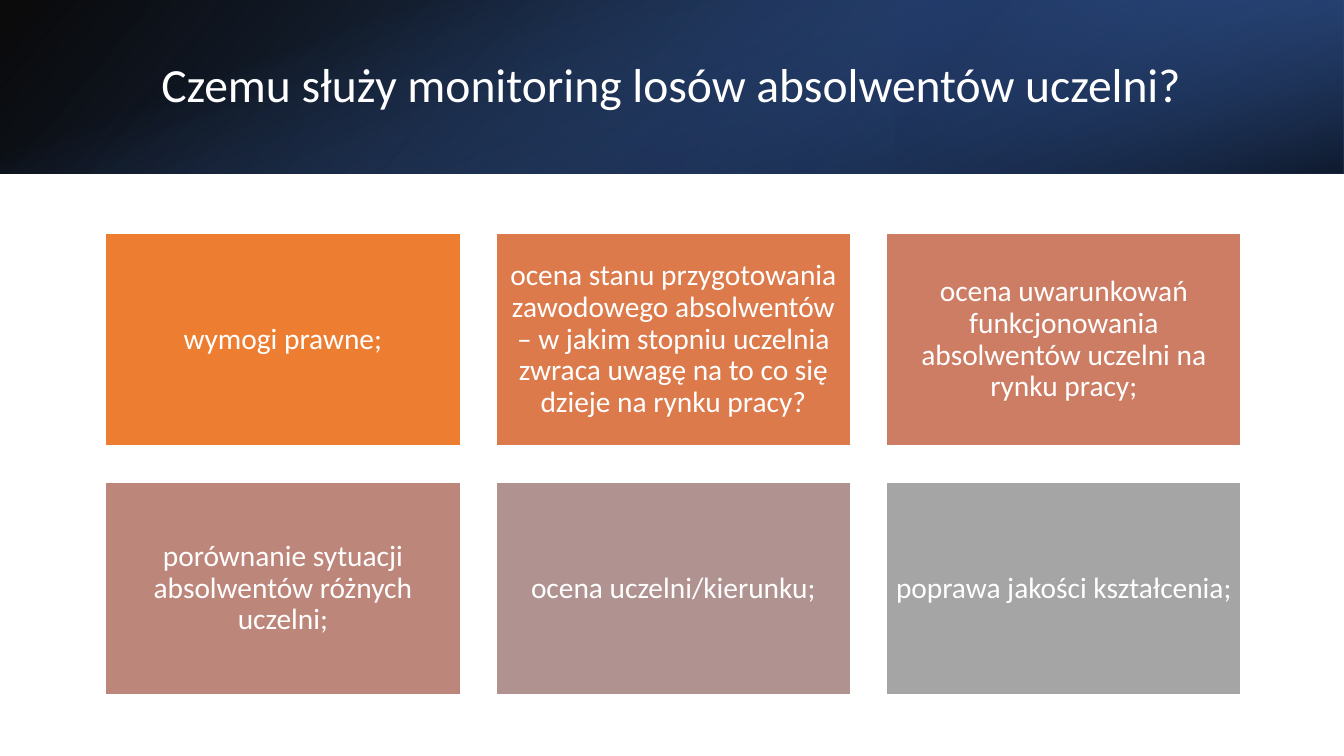
"""Build a slide with a gradient title band and a grid of six cards."""
import pptx
import pptx.dml.color
import pptx.enum.shapes
import pptx.enum.text
import pptx.oxml
import pptx.oxml.ns
import pptx.util

Cm = pptx.util.Cm
RGBColor = pptx.dml.color.RGBColor
WHITE = RGBColor(0xFF, 0xFF, 0xFF)
BLACK = RGBColor(0x00, 0x00, 0x00)
NAVY = RGBColor(0x20, 0x38, 0x64)
DEEP = RGBColor(0x2F, 0x55, 0x97)
BLUE = RGBColor(0x44, 0x72, 0xC4)
FONT = "Calibri"
WIDE, BAND = 33.87, 4.37

CARDS = [
    ("wymogi prawne;", RGBColor(0xED, 0x7D, 0x31)),
    ("ocena stanu przygotowania zawodowego absolwentów – w jakim stopniu "
     "uczelnia zwraca uwagę na to co się dzieje na rynku pracy?",
     RGBColor(0xDC, 0x7A, 0x4B)),
    ("ocena uwarunkowań funkcjonowania absolwentów uczelni na rynku pracy;",
     RGBColor(0xCC, 0x7D, 0x64)),
    ("porównanie sytuacji absolwentów różnych uczelni;",
     RGBColor(0xBD, 0x86, 0x7B)),
    ("ocena uczelni/kierunku;", RGBColor(0xB0, 0x93, 0x91)),
    ("poprawa jakości kształcenia;", RGBColor(0xA5, 0xA5, 0xA5)),
]


def add_rect(slide, left, top, width, height):
    """Add a plain rectangle measured in centimetres."""
    rect = slide.shapes.add_shape(
        pptx.enum.shapes.MSO_SHAPE.RECTANGLE,
        Cm(left), Cm(top), Cm(width), Cm(height))
    rect.shadow.inherit = False
    return rect


def add_fade(slide, box, stops, angle, turn=0, flip=False):
    """Add a rectangle with a see-through linear gradient."""
    rect = add_rect(slide, *box)
    rect.rotation = turn
    rect.line.fill.background()
    props = rect._element.spPr
    if flip:
        props.find(pptx.oxml.ns.qn("a:xfrm")).set("flipH", "1")
    marks = "".join(
        f'<a:gs pos="{place * 1000}"><a:srgbClr val="{color}">'
        f'<a:alpha val="{alpha * 1000}"/></a:srgbClr></a:gs>'
        for place, color, alpha in stops)
    fill = pptx.oxml.parse_xml(
        f'<a:gradFill {pptx.oxml.ns.nsdecls("a")} rotWithShape="1">'
        f'<a:gsLst>{marks}</a:gsLst>'
        f'<a:lin ang="{angle * 60000}" scaled="0"/></a:gradFill>')
    props.find(pptx.oxml.ns.qn("a:prstGeom")).addnext(fill)


def add_text(frame, text, size, align):
    """Write one white run, centred in height."""
    frame.word_wrap = True
    frame.auto_size = pptx.enum.text.MSO_AUTO_SIZE.NONE
    frame.vertical_anchor = pptx.enum.text.MSO_ANCHOR.MIDDLE
    line = frame.paragraphs[0]
    line.alignment = align
    line.line_spacing = 0.9
    run = line.add_run()
    run.text = text
    run.font.name = FONT
    run.font.size = pptx.util.Pt(size)
    run.font.color.rgb = WHITE


def add_card(slide, left, top, text, color):
    """Add one filled card with its text."""
    card = add_rect(slide, left, top, 8.94, 5.36)
    card.fill.solid()
    card.fill.fore_color.rgb = color
    card.line.color.rgb = WHITE
    card.line.width = pptx.util.Pt(1)
    frame = card.text_frame
    frame.margin_left = frame.margin_right = Cm(0.22)
    frame.margin_top = frame.margin_bottom = Cm(0.22)
    add_text(frame, text, 21, pptx.enum.text.PP_ALIGN.CENTER)


def add_title(slide, text):
    """Place the title on top of the band."""
    title = slide.shapes.title
    title.left, title.top = Cm(3.81), Cm(0.97)
    title.width, title.height = Cm(27.89), Cm(2.44)
    add_text(title.text_frame, text, 34, pptx.enum.text.PP_ALIGN.LEFT)
    slide.shapes._spTree.append(title._element)


def main():
    """Build and save the slide."""
    deck = pptx.Presentation()
    deck.slide_width, deck.slide_height = Cm(WIDE), Cm(19.05)
    slide = deck.slides.add_slide(deck.slide_layouts[5])
    add_fade(slide, (0, 0, WIDE, BAND),
             [(0, BLACK, 96), (100, DEEP, 100)], 140, flip=True)
    add_fade(slide, (WIDE * 2 / 3, 0, WIDE / 3, BAND),
             [(19, NAVY, 68), (100, BLUE, 79)], 320, turn=180, flip=True)
    shift = (WIDE - BAND) / 2
    add_fade(slide, (shift, -shift, BAND, WIDE),
             [(23, BLUE, 0), (99, BLACK, 74)], 340, turn=90)
    add_title(slide, "Czemu służy monitoring losów absolwentów uczelni?")
    for index, (text, color) in enumerate(CARDS):
        row, col = divmod(index, 3)
        add_card(slide, 2.66 + col * 9.84, 5.88 + row * 6.27, text, color)
    deck.save("out.pptx")


if __name__ == "__main__":
    main()
